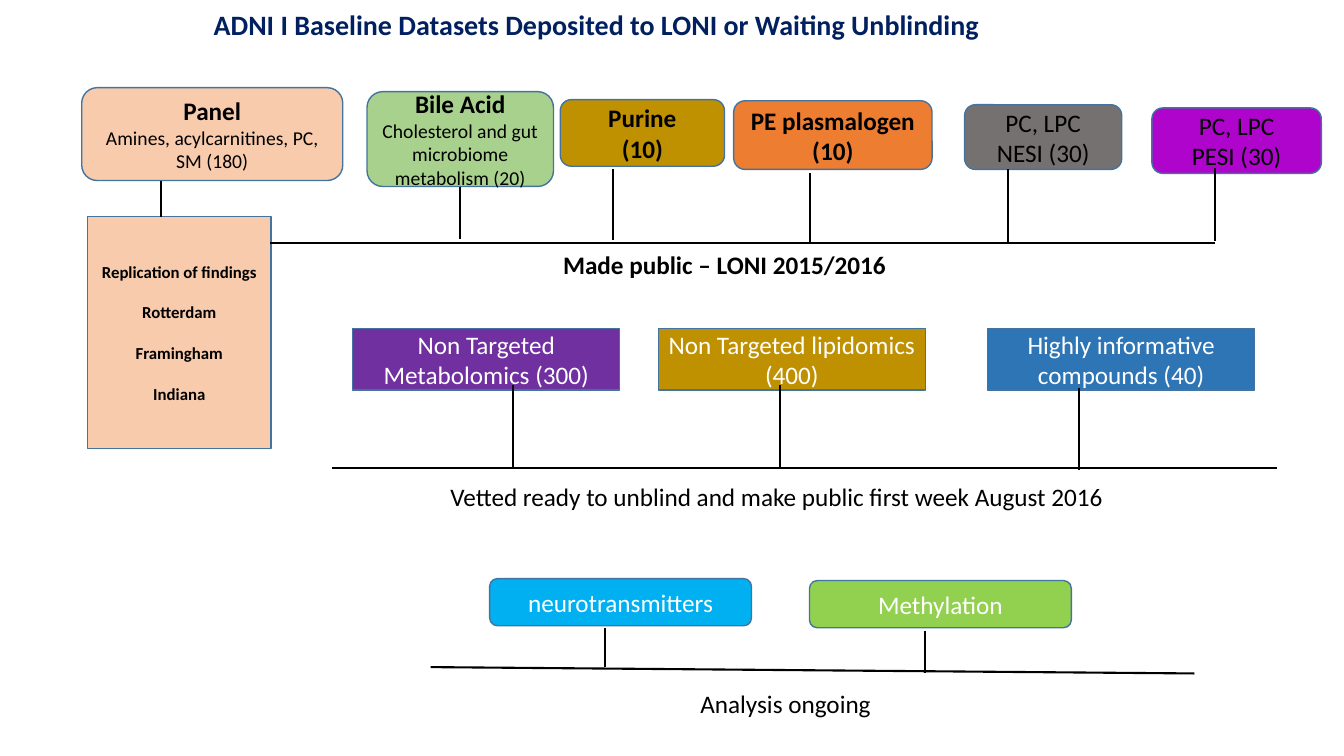
from lxml.etree import SubElement
from pptx import Presentation
from pptx.dml.color import RGBColor
from pptx.enum.shapes import MSO_CONNECTOR as Connector, MSO_SHAPE as Shape
from pptx.enum.text import MSO_ANCHOR as Anchor, MSO_AUTO_SIZE as AutoSize, PP_ALIGN as Align
from pptx.oxml.ns import qn
from pptx.util import Cm, Pt

COLORS = {
    "navy": "002060", "black": "000000", "white": "FFFFFF", "outline": "43739E",
    "peach": "F8CBAD", "sage": "A9D18E", "gold": "BF9000", "orange": "ED7D31",
    "gray": "767171", "magenta": "AF04CC", "purple": "7030A0", "blue": "2E75B6",
    "sky": "00B0F0", "lime": "92D050",
}
BOTTOM = 2

# left, top, width, height, fill, paragraphs as (text, size, bold)
PUBLIC_BOXES = {
    "PESI": (29.03, 2.72, 4.27, 1.65, "magenta", [("PC, LPC", 18, False), ("PESI (30)", 18, False)]),
    "NESI": (24.31, 2.64, 3.96, 1.63, "gray", [("PC, LPC", 18, False), ("NESI (30)", 18, False)]),
    "PE": (18.49, 2.54, 5, 1.73, "orange", [("PE plasmalogen", 18, True), ("(10)", 18, True)]),
    "Purine": (14.12, 2.51, 4.14, 1.68, "gold", [("Purine", 18, True), ("(10)", 18, True)]),
    "Bile": (9.25, 2.31, 4.7, 2.39, "sage", [
        ("Bile Acid", 18, True), ("Cholesterol and gut microbiome metabolism (20)", 14, False)]),
    "Panel": (2.06, 2.21, 6.58, 2.34, "peach", [
        ("Panel", 18, True), ("Amines, acylcarnitines, PC, SM (180)", 14, False)]),
}
VETTED_BOXES = [
    (8.89, "purple", "Non Targeted Metabolomics (300)"),
    (16.59, "gold", "Non Targeted lipidomics (400)"),
    (24.89, "blue", "Highly informative compounds (40)"),
]
ONGOING_BOXES = [
    (12.34, 14.58, "sky", "neurotransmitters"),
    (20.4, 14.63, "lime", "Methylation"),
]
REPLICATION = ["Replication of findings", "Rotterdam", "Framingham", "Indiana"]

RAILS = [
    (6.81, 6.12, 30.63, 6.12),
    (8.36, 11.79, 32.18, 11.79),
    (10.85, 16.81, 30.1, 16.97),
]
# x, top, bottom
STEMS = [
    (4.06, 4.55, 5.46), (15.44, 4.27, 6.05), (20.42, 4.37, 6.12),
    (25.4, 4.27, 6.12), (30.63, 4.24, 6.07),
    (12.93, 9.7, 11.79), (19.66, 9.7, 11.79), (27.2, 9.78, 11.84),
    (15.24, 15.82, 16.81), (23.32, 15.9, 16.97),
]
CAPTIONS = [
    (13.94, 6.17, 8.74, "Made public – LONI 2015/2016", True),
    (11.1, 12.01, 17.17, "Vetted ready to unblind and make public first week August 2016", False),
    (17.4, 17.22, 4.85, "Analysis ongoing", False),
]


def rgb(color):
    return RGBColor.from_string(COLORS[color])


def apply(target, values):
    for name, value in values.items():
        setattr(target, name, value)


def write(frame, paragraphs, color, align, gap=0):
    """Fill a text frame with (text, size, bold) paragraphs, gap points apart."""
    for index, (text, size, bold) in enumerate(paragraphs):
        paragraph = frame.add_paragraph() if index else frame.paragraphs[0]
        paragraph.text = text
        apply(paragraph, {"alignment": align, "space_before": Pt(gap if index else 0)})
        apply(paragraph.font, {"name": "Calibri", "size": Pt(size), "bold": bold})
        paragraph.font.color.rgb = rgb(color)


def add_title(slide, text):
    title = slide.shapes.title
    apply(title, {"left": Cm(5.13), "top": Cm(0.05), "width": Cm(25.5), "height": Cm(2.31)})
    apply(title.text_frame, {"word_wrap": True, "auto_size": AutoSize.NONE,
                             "vertical_anchor": Anchor.TOP})
    write(title.text_frame, [(text, 20, True)], "navy", Align.LEFT)


def add_box(slide, kind, bounds, fill, paragraphs, color="black", gap=0):
    shape = slide.shapes.add_shape(kind, *map(Cm, bounds))
    shape.shadow.inherit = False
    shape.fill.solid()
    shape.fill.fore_color.rgb = rgb(fill)
    shape.line.color.rgb = rgb("outline")
    shape.line.width = Pt(1)
    apply(shape.text_frame, {"word_wrap": True, "vertical_anchor": Anchor.MIDDLE})
    write(shape.text_frame, paragraphs, color, Align.CENTER, gap)
    return shape


def add_line(slide, *ends):
    line = slide.shapes.add_connector(Connector.STRAIGHT, *map(Cm, ends))
    line.line.color.rgb = rgb("black")
    line.line.width = Pt(1.5)
    SubElement(line._element.spPr, qn("a:effectLst"))
    return line


def add_caption(slide, left, top, width, text, bold):
    box = slide.shapes.add_textbox(Cm(left), Cm(top), Cm(width), Cm(1.02))
    apply(box.text_frame, {"word_wrap": False, "auto_size": AutoSize.SHAPE_TO_FIT_TEXT})
    write(box.text_frame, [(text, 18, bold)], "black", Align.LEFT)


def main():
    presentation = Presentation()
    apply(presentation, {"slide_width": Cm(33.87), "slide_height": Cm(19.05)})
    slide = presentation.slides.add_slide(presentation.slide_layouts[5])
    add_title(slide, "ADNI I Baseline Datasets Deposited to LONI or Waiting Unblinding")

    public = {}
    for name, (*bounds, fill, paragraphs) in PUBLIC_BOXES.items():
        public[name] = add_box(slide, Shape.ROUNDED_RECTANGLE, bounds, fill, paragraphs)
    add_box(slide, Shape.RECTANGLE, (2.21, 5.46, 4.62, 5.84), "peach",
            [(text, 12, True) for text in REPLICATION], gap=14.6)
    for left, fill, text in VETTED_BOXES:
        add_box(slide, Shape.RECTANGLE, (left, 8.28, 6.73, 1.55), fill,
                [(text, 18, False)], "white")
    for left, top, fill, text in ONGOING_BOXES:
        add_box(slide, Shape.ROUNDED_RECTANGLE, (left, top, 6.6, 1.19), fill,
                [(text, 18, False)], "white")

    for rail in RAILS:
        add_line(slide, *rail)
    for x, top, bottom in STEMS:
        add_line(slide, x, top, x, bottom)
    bile_stem = add_line(slide, 11.6, 4.7, 11.6, 6.02)
    bile_stem.begin_connect(public["Bile"], BOTTOM)

    for caption in CAPTIONS:
        add_caption(slide, *caption)
    presentation.save("out.pptx")


if __name__ == "__main__":
    main()
